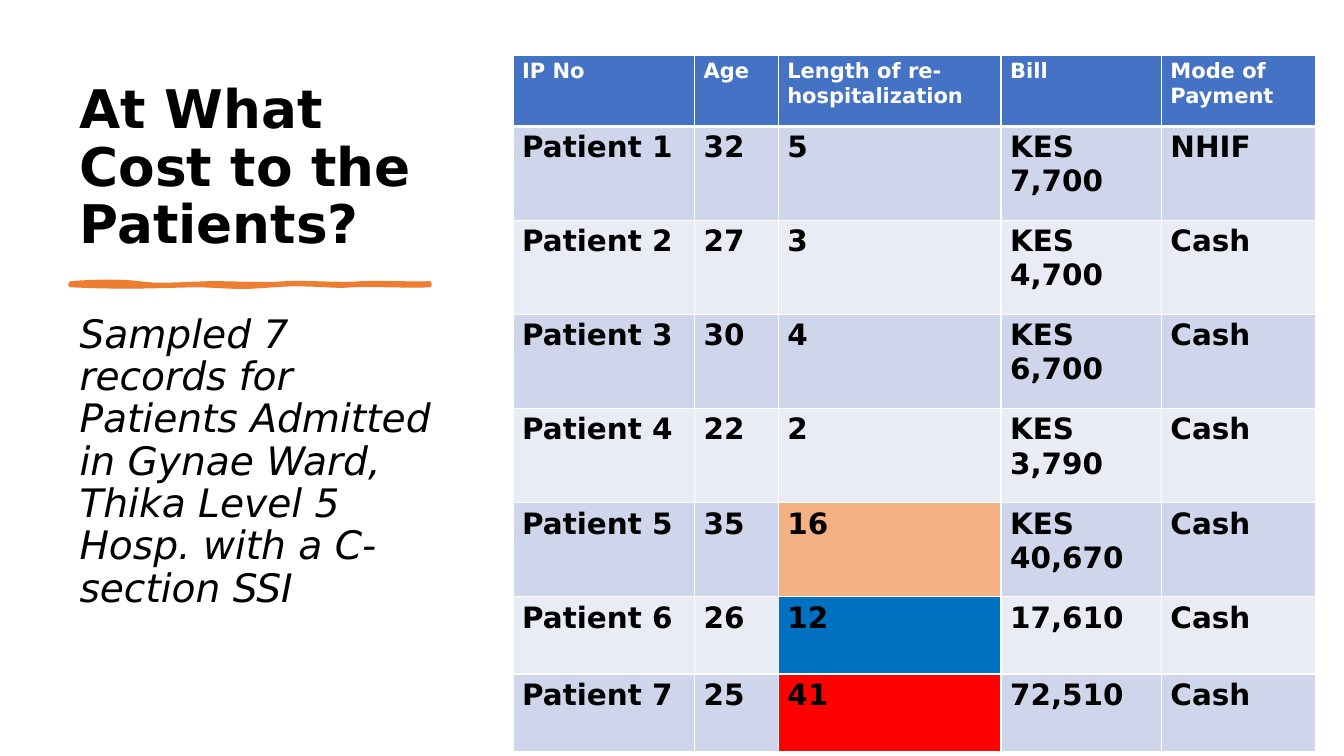
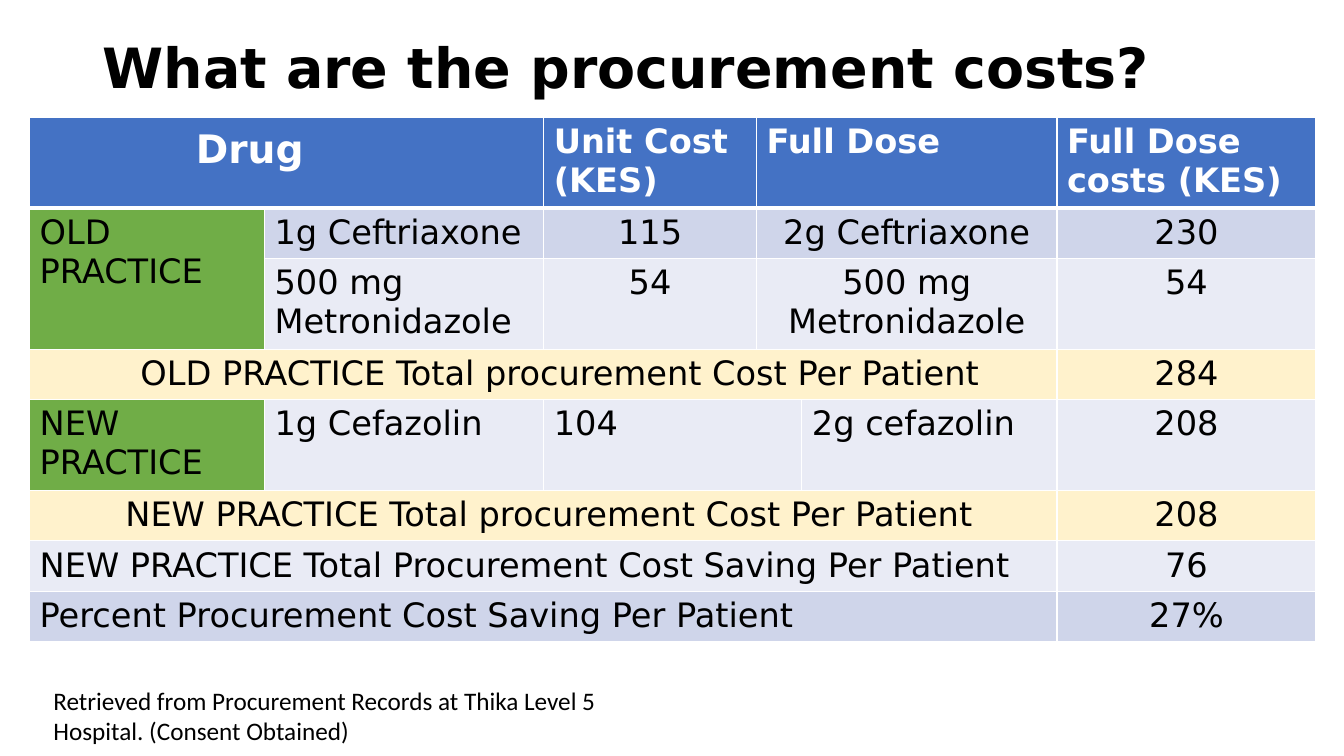
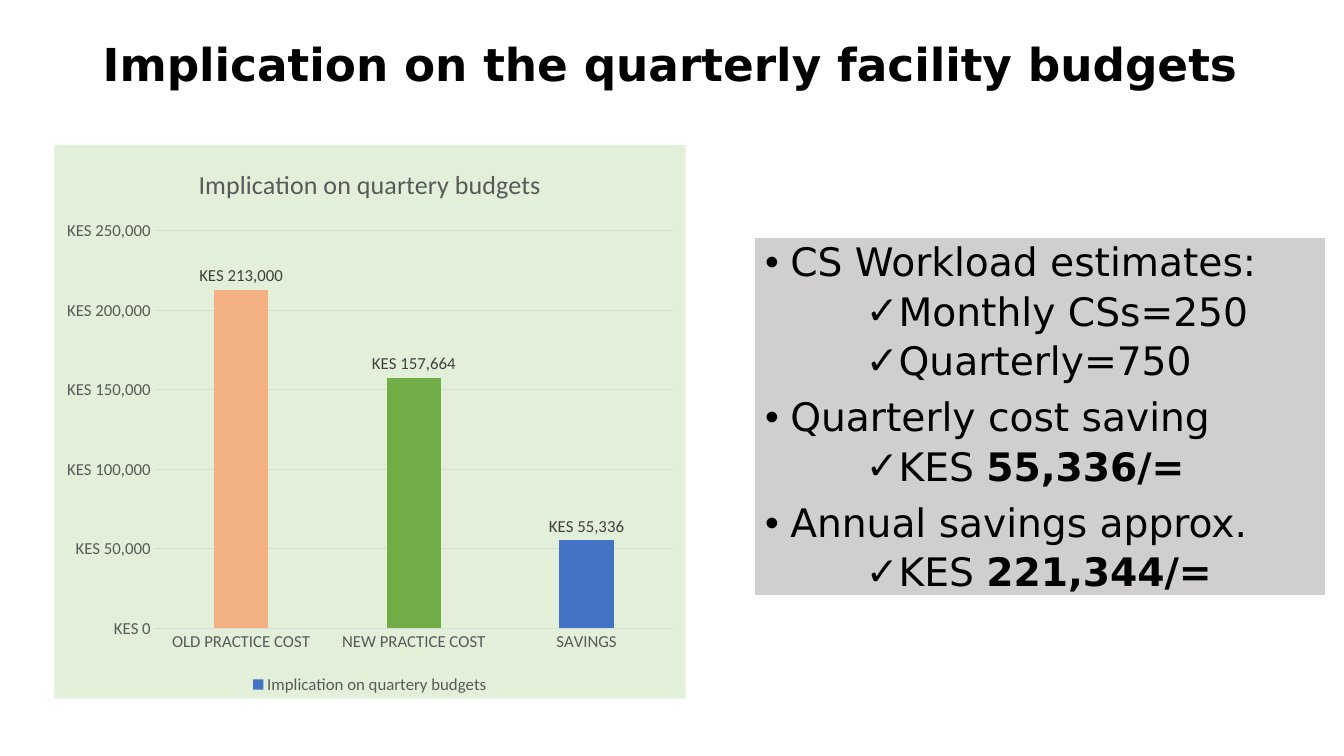
"""Build three slides on patient costs, procurement costs and quarterly budgets."""
from dataclasses import dataclass

from lxml.etree import SubElement
from pptx import Presentation
from pptx.chart.data import CategoryChartData
from pptx.dml.color import RGBColor
from pptx.enum.chart import (XL_CHART_TYPE as ChartType, XL_LABEL_POSITION as LabelPosition,
                             XL_LEGEND_POSITION as LegendPosition, XL_TICK_MARK as TickMark)
from pptx.enum.shapes import MSO_SHAPE as Preset
from pptx.enum.text import MSO_ANCHOR as Anchor, PP_ALIGN as Align
from pptx.oxml import parse_xml
from pptx.oxml.ns import nsdecls, qn
from pptx.util import Inches, Pt


@dataclass(frozen=True)
class Theme:
    heading_font: str = "DejaVu Sans"
    plain_font: str = "Calibri"
    black: str = "000000"
    white: str = "FFFFFF"
    blue: str = "4472C4"
    band_dark: str = "CFD5EA"
    band_light: str = "E9EBF5"
    orange: str = "ED7D31"
    peach: str = "F4B183"
    strong_blue: str = "0070C0"
    red: str = "FF0000"
    green: str = "70AD47"
    cream: str = "FFF2CC"
    panel: str = "D0CECE"
    chart_back: str = "E2F0D9"
    chart_text: str = "595959"
    chart_label: str = "404040"
    chart_line: str = "D9D9D9"
    title_sizes: tuple = (38, 39.6, 32.4)
    body: float = 28
    cell_head: float = 15
    cell: float = 21
    cost: float = 24
    note: float = 18
    chart_title: float = 18.6
    chart_small: float = 12


theme = Theme()
presentation = Presentation()
presentation.slide_width, presentation.slide_height = Inches(13.33), Inches(7.5)
column, row = presentation.slide_width / 100, presentation.slide_height / 100


def area(left, top, width, height):
    """Turn percentages of the slide into a position and a size."""
    return round(left * column), round(top * row), round(width * column), round(height * row)


def style(font, size, colour=theme.black, name=theme.heading_font, bold=False, italic=False):
    """Apply one set of format values to a font."""
    values = {"size": Pt(size), "name": name, "bold": bold, "italic": italic}
    for attribute, value in values.items():
        setattr(font, attribute, value)
    font.color.rgb = RGBColor.from_string(colour)


patients, costs, budgets = [presentation.slides.add_slide(presentation.slide_layouts[6])
                            for _ in range(3)]

title_look, intro_look = {"bold": True}, {"italic": True}
note_look = {"name": theme.plain_font}
texts = [
    (patients, (5.18, 9.33, 28.13, 25.07), Anchor.BOTTOM, "At What Cost to the Patients?",
     theme.title_sizes[0], 0.9, title_look),
    (patients, (5.18, 40.93, 28.13, 49.73), Anchor.TOP,
     "Sampled 7 records for Patients Admitted in Gynae Ward, Thika Level 5 Hosp. "
     "with a C-section SSI", theme.body, 0.9, intro_look),
    (costs, (6.9, 2.27, 86.27, 14), Anchor.MIDDLE, "What are the procurement costs?",
     theme.title_sizes[1], 0.9, title_look),
    (costs, (3.23, 90, 47.86, 9.47), Anchor.TOP,
     "Retrieved from Procurement Records at Thika Level 5 Hospital. (Consent Obtained)",
     theme.note, 1, note_look),
    (budgets, (6.9, 2.67, 86.27, 12.27), Anchor.MIDDLE,
     "Implication on the quarterly facility budgets", theme.title_sizes[2], 0.9, title_look),
]
for slide, place, anchor, text, size, spacing, look in texts:
    frame = slide.shapes.add_textbox(*area(*place)).text_frame
    frame.word_wrap, frame.vertical_anchor = True, anchor
    paragraph = frame.paragraphs[0]
    paragraph.line_spacing = spacing
    run = paragraph.add_run()
    run.text = text
    style(run.font, size, **look)

stroke_start = (0.7, 2.81)
stroke_curves = [
    ((0.97, 2.79), (1.21, 2.79), (1.38, 2.81)), ((1.55, 2.84), (1.77, 2.82), (2.09, 2.81)),
    ((2.41, 2.81), (2.6, 2.83), (2.84, 2.81)), ((3.08, 2.8), (3.39, 2.83), (3.59, 2.81)),
    ((3.79, 2.8), (4.12, 2.82), (4.26, 2.81)), ((4.26, 2.82), (4.26, 2.83), (4.26, 2.83)),
    ((4.08, 2.84), (3.64, 2.82), (3.48, 2.83)), ((3.32, 2.85), (3.04, 2.8), (2.7, 2.83)),
    ((2.35, 2.86), (2.31, 2.84), (1.99, 2.83)), ((1.66, 2.83), (1.32, 2.86), (0.7, 2.83)),
]
steps, stroke_points, start = 8, [], stroke_start
for first, second, end in stroke_curves:
    for step in range(1, steps + 1):
        t = step / steps
        weights = ((1 - t) ** 3, 3 * t * (1 - t) ** 2, 3 * t ** 2 * (1 - t), t ** 3)
        stroke_points.append(tuple(
            Inches(sum(weight * value for weight, value in zip(weights, axis)))
            for axis in zip(start, first, second, end)))
    start = end
builder = patients.shapes.build_freeform(*map(Inches, stroke_start))
builder.add_line_segments(stroke_points, close=True)
stroke = builder.convert_to_shape()
stroke.shadow.inherit = False
stroke.fill.solid()
stroke.fill.fore_color.rgb = stroke.line.color.rgb = RGBColor.from_string(theme.orange)
stroke.line.width = Pt(3)

tables = [
    {
        "slide": patients, "corner": (38.18, 7.33),
        "columns": [13.5, 6.23, 16.58, 11.93, 11.48],
        "rows": [9.4] + [12.45] * 5 + [10.2] * 2,
        "cells": [
            ("IP No", "Age", "Length of re-hospitalization", "Bill", "Mode of Payment"),
            ("Patient 1", "32", "5", "KES 7,700", "NHIF"),
            ("Patient 2", "27", "3", "KES 4,700", "Cash"),
            ("Patient 3", "30", "4", "KES 6,700", "Cash"),
            ("Patient 4", "22", "2", "KES 3,790", "Cash"),
            ("Patient 5", "35", "16", "KES 40,670", "Cash"),
            ("Patient 6", "26", "12", "17,610", "Cash"),
            ("Patient 7", "25", "41", "72,510", "Cash"),
        ],
        "fills": {(5, 2): theme.peach, (6, 2): theme.strong_blue, (7, 2): theme.red},
        "head": theme.cell_head, "size": theme.cell, "bold": True, "margins": (0.09, 0.04),
        "sizes": {}, "indents": {}, "centred": set(), "merges": [],
    },
    {
        "slide": costs, "corner": (2.2, 15.5),
        "columns": [17.48, 20.78, 15.83, 3.38, 18.98, 19.28],
        "rows": [11.6, 6.45, 11.6, 6.45, 11.6, 6.45, 6.45, 6.45],
        "cells": [
            ("Drug", "", "Unit Cost (KES)", "Full Dose", "", "Full Dose costs (KES)"),
            ("OLD PRACTICE", "1g Ceftriaxone", "115", "2g Ceftriaxone", "", "230"),
            ("", "500 mg Metronidazole", "54", "500 mg Metronidazole", "", "54"),
            ("OLD PRACTICE Total procurement Cost Per Patient", "", "", "", "", "284"),
            ("NEW PRACTICE", "1g Cefazolin", "104", "", "2g cefazolin", "208"),
            ("NEW PRACTICE Total procurement Cost Per Patient", "", "", "", "", "208"),
            ("NEW PRACTICE Total Procurement Cost Saving Per Patient", "", "", "", "", "76"),
            ("Percent Procurement Cost Saving Per Patient", "", "", "", "", "27%"),
        ],
        "fills": {**{(line, 0): theme.green for line in (1, 2, 4)},
                  **{(line, place): theme.cream for line in (3, 5) for place in range(6)}},
        "head": theme.cost, "size": theme.cost, "bold": False, "margins": (0.1, 0.05),
        "sizes": {(0, 0): theme.body}, "indents": {(0, 0): 1.55, (3, 0): 1, (5, 0): 0.85},
        "centred": {(line, 5) for line in range(1, 8)}
        | {(line, place) for line in (1, 2) for place in (2, 3)},
        "merges": [(0, 0, 0, 1), (0, 3, 0, 4), (1, 0, 2, 0), (1, 3, 1, 4), (2, 3, 2, 4),
                   (4, 2, 4, 3)] + [(line, 0, line, 4) for line in (3, 5, 6, 7)],
    },
]
for plan in tables:
    place = area(*plan["corner"], sum(plan["columns"]), sum(plan["rows"]))
    table = plan["slide"].shapes.add_table(len(plan["rows"]), len(plan["columns"]), *place).table
    for table_column, share in zip(table.columns, plan["columns"]):
        table_column.width = round(share * column)
    for table_row, share in zip(table.rows, plan["rows"]):
        table_row.height = round(share * row)
    for top, left, bottom, right in plan["merges"]:
        table.cell(top, left).merge(table.cell(bottom, right))
    for line, words in enumerate(plan["cells"]):
        head = line == 0
        band = theme.blue if head else theme.band_dark if line % 2 else theme.band_light
        for place, text in enumerate(words):
            key, cell = (line, place), table.cell(line, place)
            side, edge = map(Inches, plan["margins"])
            cell.margin_left = cell.margin_right = side
            cell.margin_top = cell.margin_bottom = edge
            properties = cell._tc.get_or_add_tcPr()
            for border in ("lnL", "lnR", "lnT", "lnB"):
                thick = (head and border == "lnB") or (line == 1 and border == "lnT")
                outline = SubElement(properties, qn("a:" + border), w=str(Pt(3 if thick else 1)))
                paint = SubElement(outline, qn("a:solidFill"))
                SubElement(paint, qn("a:srgbClr"), val=theme.white)
            cell.fill.solid()
            cell.fill.fore_color.rgb = RGBColor.from_string(plan["fills"].get(key, band))
            if not text:
                continue
            paragraph = cell.text_frame.paragraphs[0]
            if key in plan["indents"]:
                paragraph._p.get_or_add_pPr().set("marL", str(Inches(plan["indents"][key])))
            if key in plan["sizes"]:
                cell.margin_top = Inches(0.1)
            paragraph.alignment = Align.CENTER if key in plan["centred"] else Align.LEFT
            run = paragraph.add_run()
            run.text = text
            style(run.font, plan["sizes"].get(key, plan["head"] if head else plan["size"]),
                  theme.white if head else theme.black, bold=head or plan["bold"])

panel = budgets.shapes.add_shape(Preset.RECTANGLE, *area(56.19, 31.5, 42.39, 47.2))
panel.shadow.inherit = False
panel.fill.solid()
panel.fill.fore_color.rgb = RGBColor.from_string(theme.panel)
panel.line.fill.background()
frame = panel.text_frame
frame.word_wrap, frame.vertical_anchor = True, Anchor.TOP
levels = [("•", "Arial", 0.25, 10), ("✓", theme.heading_font, 1.25, 5)]
savings = [(0, "CS Workload estimates:", ""), (1, "Monthly CSs=250", ""),
           (1, "Quarterly=750", ""), (0, "Quarterly cost saving", ""),
           (1, "KES ", "55,336/="), (0, "Annual savings approx.", ""),
           (1, "KES ", "221,344/=")]
for number, (level, plain, strong) in enumerate(savings):
    mark, mark_font, indent, before = levels[level]
    paragraph = frame.add_paragraph() if number else frame.paragraphs[0]
    properties = paragraph._p.get_or_add_pPr()
    properties.set("marL", str(Inches(indent)))
    properties.set("indent", str(Inches(-0.25)))
    SubElement(properties, qn("a:buFont"), typeface=mark_font)
    SubElement(properties, qn("a:buChar"), char=mark)
    paragraph.alignment, paragraph.line_spacing = Align.LEFT, 0.9
    paragraph.space_before = Pt(before if number else 0)
    for text, bold in ((plain, False), (strong, True)):
        if text:
            run = paragraph.add_run()
            run.text = text
            style(run.font, theme.body, bold=bold)

money, series_name = "[$KES]\\ #,##0", "Implication on quartery budgets"
data = CategoryChartData(number_format=money)
data.categories = ["OLD PRACTICE COST", "NEW PRACTICE COST", "SAVINGS"]
data.add_series(series_name, (213000, 157664, 55336))
chart = budgets.shapes.add_chart(ChartType.COLUMN_CLUSTERED,
                                 *area(4.05, 19.2, 46.96, 73.2), data).chart
style(chart.font, theme.chart_small, theme.chart_text, theme.plain_font)
chart._chartSpace.find(qn("c:chart")).addnext(parse_xml(
    f'<c:spPr {nsdecls("c", "a")}><a:solidFill><a:srgbClr val="{theme.chart_back}"/></a:solidFill>'
    '<a:ln><a:noFill/></a:ln></c:spPr>'))
chart.has_title = chart.has_legend = True
chart.chart_title.include_in_layout = False
run = chart.chart_title.text_frame.paragraphs[0].add_run()
run.text = series_name
style(run.font, theme.chart_title, theme.chart_text, theme.plain_font)
chart.legend.position, chart.legend.include_in_layout = LegendPosition.BOTTOM, False

values, categories = chart.value_axis, chart.category_axis
for axis in (values, categories):
    axis.major_tick_mark = axis.minor_tick_mark = TickMark.NONE
    style(axis.tick_labels.font, theme.chart_small, theme.chart_text, theme.plain_font)
for line in (values.major_gridlines.format.line, categories.format.line):
    line.color.rgb, line.width = RGBColor.from_string(theme.chart_line), Pt(0.75)
values.format.line.fill.background()
values.minimum_scale, values.maximum_scale, values.major_unit = 0, 250000, 50000
values.tick_labels.number_format, values.tick_labels.number_format_is_linked = money, False

plot = chart.plots[0]
plot.vary_by_categories, plot.gap_width, plot.overlap = False, 219, -27
series = plot.series[0]
series.format.fill.solid()
series.format.fill.fore_color.rgb = RGBColor.from_string(theme.blue)
for number, colour in enumerate((theme.peach, theme.green)):
    fill = series.points[number].format.fill
    fill.solid()
    fill.fore_color.rgb = RGBColor.from_string(colour)
labels = series.data_labels
label_values = {"show_value": True, "position": LabelPosition.OUTSIDE_END,
                "number_format": money, "number_format_is_linked": False}
for attribute, value in label_values.items():
    setattr(labels, attribute, value)
style(labels.font, theme.chart_small, theme.chart_label, theme.plain_font)

presentation.save("out.pptx")
